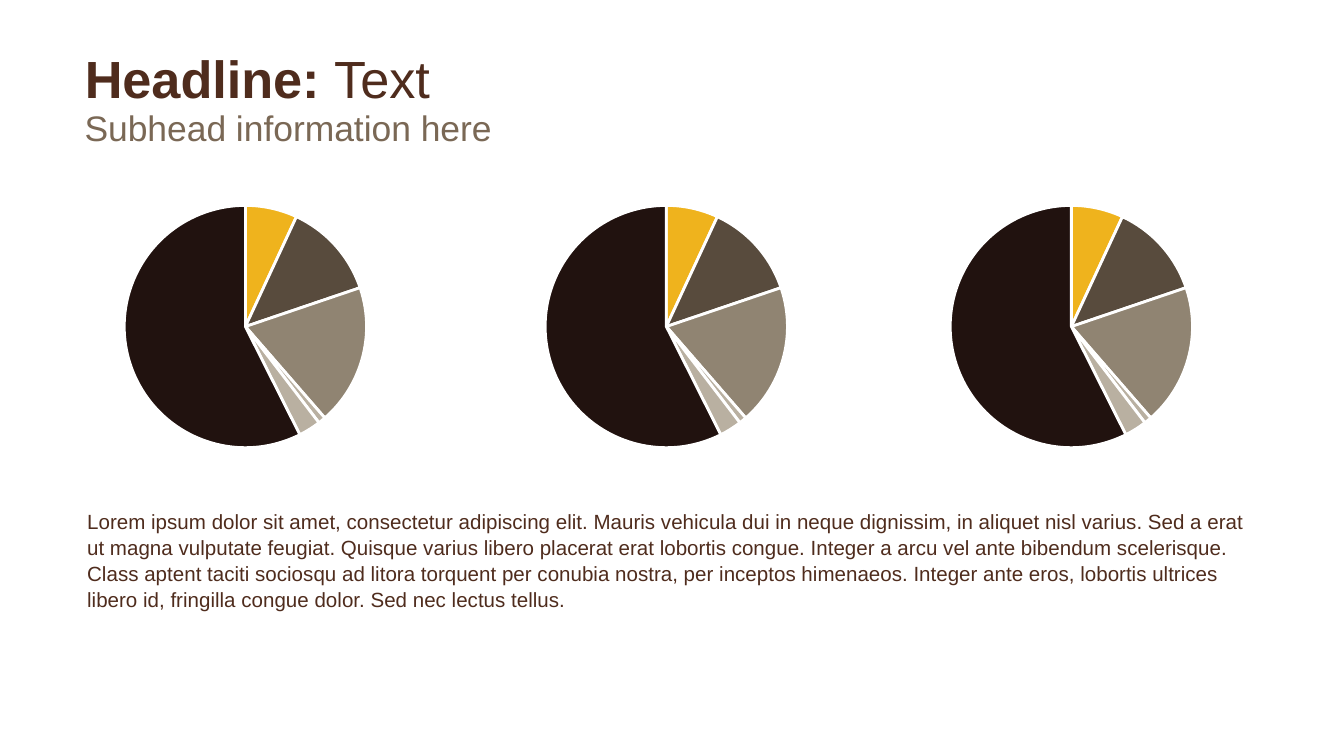
from dataclasses import dataclass

from lxml import etree
from pptx import Presentation
from pptx.chart.data import CategoryChartData
from pptx.dml.color import RGBColor
from pptx.enum.chart import XL_CHART_TYPE
from pptx.enum.text import MSO_ANCHOR, MSO_AUTO_SIZE, PP_ALIGN
from pptx.oxml.ns import qn
from pptx.util import Pt

PIE = XL_CHART_TYPE.PIE
TOP, MIDDLE = MSO_ANCHOR.TOP, MSO_ANCHOR.MIDDLE
LEFT = PP_ALIGN.LEFT
NO_AUTOFIT = MSO_AUTO_SIZE.NONE


@dataclass(frozen=True)
class Theme:
    font: str = "Arial"
    chart_font: str = "Calibri"
    brown: str = "4F2C1D"
    taupe: str = "7A6855"
    black: str = "000000"
    white: str = "FFFFFF"
    slices: tuple = ("EFB31D", "584B3D", "908472", "B9B0A1", "B9B0A1", "21120F")
    headline_size: int = 28
    subhead_size: int = 19
    body_size: int = 11
    chart_size: int = 12


THEME = Theme()


def write(shape, *runs, size, color, anchor=TOP, spacing=1.0, bottom=3.6):
    """Fill a shape with one paragraph of (text, bold) runs."""
    frame = shape.text_frame
    frame.word_wrap = True
    frame.auto_size = NO_AUTOFIT
    frame.vertical_anchor = anchor
    frame.margin_bottom = Pt(bottom)
    paragraph = frame.paragraphs[0]
    paragraph.alignment = LEFT
    paragraph.line_spacing = spacing
    for text, bold in runs:
        run = paragraph.add_run()
        run.text = text
        run.font.name = THEME.font
        run.font.size = Pt(size)
        run.font.bold = bold
        run.font.color.rgb = RGBColor.from_string(color)


def place_pie(chart, **fractions):
    """Fix the plot area at fractions of the chart's width and height."""
    plot_area = chart.plots[0]._element.getparent()
    for old in plot_area.findall(qn("c:layout")):
        plot_area.remove(old)
    layout = etree.Element(qn("c:layout"))
    plot_area.insert(0, layout)
    manual = etree.SubElement(layout, qn("c:manualLayout"))
    settings = {"layoutTarget": "inner", "xMode": "edge", "yMode": "edge", **fractions}
    for tag, value in settings.items():
        etree.SubElement(manual, qn(f"c:{tag}")).set("val", str(value))


presentation = Presentation()
presentation.slide_width, presentation.slide_height = Pt(720), Pt(405)
slide = presentation.slides.add_slide(presentation.slide_layouts[5])

# Headline and subhead
headline = slide.shapes.title
headline.left, headline.top = Pt(38.2), Pt(8)
headline.width, headline.height = Pt(610), Pt(67.7)
write(headline, ("Headline: ", True), ("Text", False),
      size=THEME.headline_size, color=THEME.brown, anchor=MIDDLE)

subhead = slide.shapes.add_textbox(Pt(38.2), Pt(53.3), Pt(253.4), Pt(30.2))
write(subhead, ("Subhead information here", False),
      size=THEME.subhead_size, color=THEME.taupe)

# Three pies with the same shares
shares = CategoryChartData()
shares.categories = ["1", "2", "3", "4", "5", "6"]
shares.add_series("Series 1", (7, 13, 19, 1, 3, 58))

for pie_left in (31, 256.5, 473.5):
    chart = slide.shapes.add_chart(
        PIE, Pt(pie_left), Pt(99.5), Pt(201), Pt(151), shares).chart
    chart.has_legend = False
    chart.has_title = False
    chart.font.name = THEME.chart_font
    chart.font.size = Pt(THEME.chart_size)
    chart.font.color.rgb = RGBColor.from_string(THEME.black)
    chart.plots[0].vary_by_categories = True
    place_pie(chart, x=0.17, y=0.07, w=0.66, h=0.86)
    for index, color in enumerate(THEME.slices):
        slice_format = chart.plots[0].series[0].points[index].format
        slice_format.fill.solid()
        slice_format.fill.fore_color.rgb = RGBColor.from_string(color)
        slice_format.line.color.rgb = RGBColor.from_string(THEME.white)
        slice_format.line.width = Pt(1.5)

# Body copy
body = slide.shapes.add_textbox(Pt(39.6), Pt(270), Pt(642.2), Pt(73.4))
write(body, (
    "Lorem ipsum dolor sit amet, consectetur adipiscing elit. Mauris vehicula dui in "
    "neque dignissim, in aliquet nisl varius. Sed a erat ut magna vulputate feugiat. "
    "Quisque varius libero placerat erat lobortis congue. Integer a arcu vel ante "
    "bibendum scelerisque. Class aptent taciti sociosqu ad litora torquent per conubia "
    "nostra, per inceptos himenaeos. Integer ante eros, lobortis ultrices libero id, "
    "fringilla congue dolor. Sed nec lectus tellus.", False),
    size=THEME.body_size, color=THEME.brown, anchor=MIDDLE, spacing=1.05, bottom=17)

presentation.save("out.pptx")
